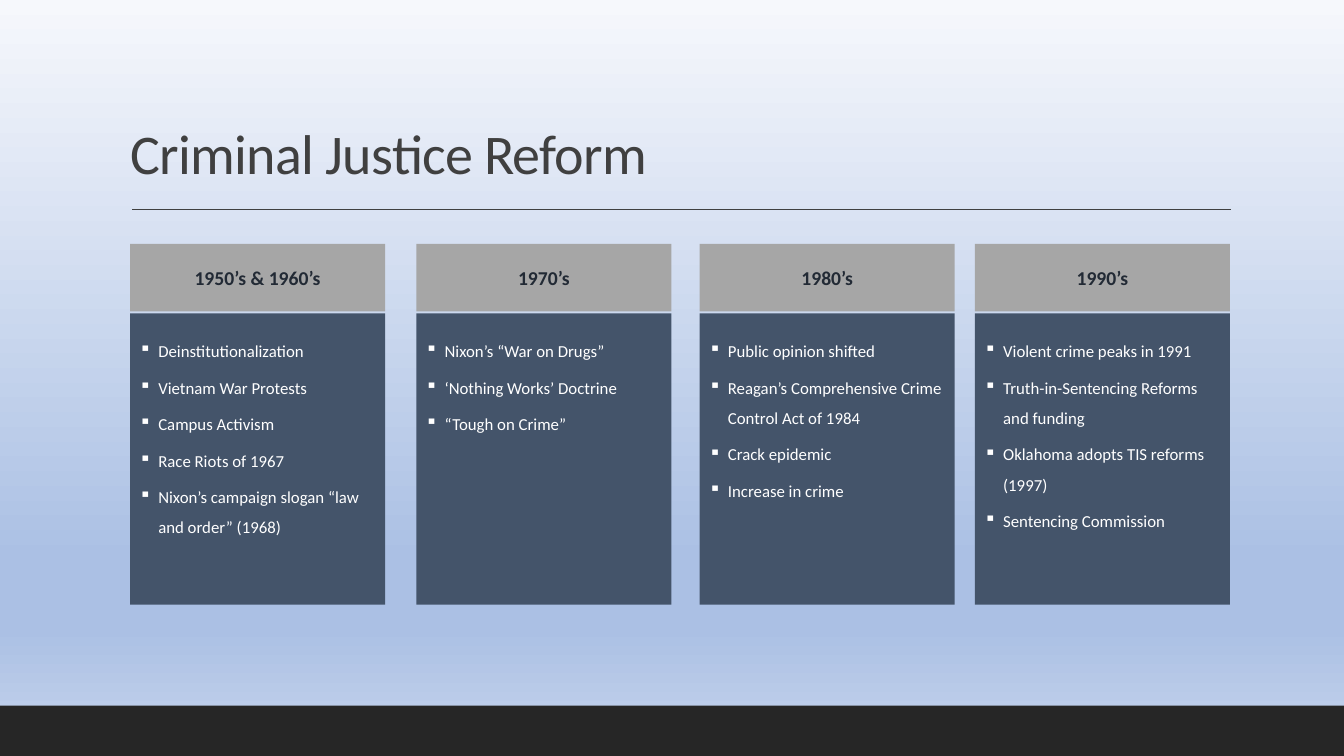
from copy import deepcopy
from dataclasses import dataclass

from lxml.etree import SubElement
from pptx import Presentation
from pptx.dml.color import RGBColor
from pptx.enum.shapes import MSO_CONNECTOR, MSO_SHAPE
from pptx.enum.text import MSO_ANCHOR, PP_ALIGN
from pptx.oxml.ns import qn
from pptx.util import Inches, Pt


@dataclass(frozen=True)
class Theme:
    font: str = "Calibri"
    ink: str = "404040"
    band: str = "262626"
    head: str = "A6A6A6"
    label: str = "222A35"
    body: str = "44546A"
    light: str = "FFFFFF"
    sky: tuple = ((0, "F6F8FC"), (74, "ABC0E4"), (83, "ABC0E4"), (100, "C7D5ED"))
    title_size: int = 40
    label_size: int = 14
    body_size: int = 12


def apply(target, values):
    for name, value in values.items():
        setattr(target, name, value)


class Deck:
    """Places elements by percent of the slide's width and height."""

    def __init__(self, theme):
        self.theme = theme
        self.prs = Presentation()
        apply(self.prs, {"slide_width": Inches(13.33), "slide_height": Inches(7.5)})
        self.slide = self.prs.slides.add_slide(self.prs.slide_layouts[6])

    def place(self, area):
        sides = (self.prs.slide_width, self.prs.slide_height) * 2
        return [round(side * share / 100) for side, share in zip(sides, area)]

    def sky(self):
        fill = self.slide.background.fill
        fill.gradient()
        fill.gradient_angle = 270
        stops = self.slide.element.xpath(".//a:gsLst")[0]
        while len(stops) < len(self.theme.sky):
            stops.append(deepcopy(stops[0]))
        for stop, (share, color) in zip(fill.gradient_stops, self.theme.sky):
            stop.position = share / 100
            stop.color.rgb = RGBColor.from_string(color)

    def box(self, area, color):
        shape = self.slide.shapes.add_shape(MSO_SHAPE.RECTANGLE, *self.place(area))
        shape.shadow.inherit = False
        shape.fill.solid()
        shape.fill.fore_color.rgb = RGBColor.from_string(color)
        shape.line.fill.background()
        return shape

    def rule(self, ends, color):
        line = self.slide.shapes.add_connector(MSO_CONNECTOR.STRAIGHT, *self.place(ends))
        line.line.width = Pt(1)
        line.line.color.rgb = RGBColor.from_string(color)
        SubElement(line._element.spPr, qn("a:effectLst"))

    def text(self, par, words, size, color, bold=False):
        run = par.add_run()
        run.text = words
        apply(run.font, {"name": self.theme.font, "size": Pt(size), "bold": bold})
        run.font.color.rgb = RGBColor.from_string(color)
        return run

    def title(self, area, words):
        frame = self.slide.shapes.add_textbox(*self.place(area)).text_frame
        apply(frame, {"word_wrap": True, "vertical_anchor": MSO_ANCHOR.BOTTOM})
        par = frame.paragraphs[0]
        par.line_spacing = 0.9
        run = self.text(par, words, self.theme.title_size, self.theme.ink)
        run._r.get_or_add_rPr().set("spc", "-50")

    def label(self, area, words):
        frame = self.box(area, self.theme.head).text_frame
        apply(frame, {"word_wrap": True, "vertical_anchor": MSO_ANCHOR.MIDDLE})
        par = frame.paragraphs[0]
        par.alignment = PP_ALIGN.CENTER
        self.text(par, words, self.theme.label_size, self.theme.label, True)

    def bullets(self, area, items):
        frame = self.box(area, self.theme.body).text_frame
        apply(frame, {"word_wrap": True, "vertical_anchor": MSO_ANCHOR.TOP,
                      "margin_left": Inches(0.09), "margin_right": Inches(0.09),
                      "margin_top": Inches(0.17)})
        for index, item in enumerate(items):
            par = frame.add_paragraph() if index else frame.paragraphs[0]
            apply(par, {"alignment": PP_ALIGN.LEFT, "line_spacing": 1.5,
                        "space_before": Pt(4.5)})
            props = par._p.get_or_add_pPr()
            props.set("marL", str(Inches(0.19)))
            props.set("indent", str(-Inches(0.19)))
            SubElement(props, qn("a:buChar")).set("char", "▪")
            self.text(par, item, self.theme.body_size, self.theme.light)


ERAS = [
    (9.68, "1950’s & 1960’s", [
        "Deinstitutionalization", "Vietnam War Protests", "Campus Activism",
        "Race Riots of 1967", "Nixon’s campaign slogan “law and order” (1968)"]),
    (30.98, "1970’s", [
        "Nixon’s “War on Drugs”", "‘Nothing Works’ Doctrine", "“Tough on Crime”"]),
    (52.06, "1980’s", [
        "Public opinion shifted", "Reagan’s Comprehensive Crime Control Act of 1984",
        "Crack epidemic", "Increase in crime"]),
    (72.54, "1990’s", [
        "Violent crime peaks in 1991", "Truth-in-Sentencing Reforms and funding",
        "Oklahoma adopts TIS reforms (1997)", "Sentencing Commission"]),
]
WIDTH = 18.98


def main():
    deck = Deck(Theme())

    # Backdrop, footer band and title
    deck.sky()
    deck.box((0, 93.33, 100, 6.67), deck.theme.band)
    deck.rule((9.83, 27.73, 91.6, 27.73), deck.theme.ink)
    deck.title((9, 4.13, 82.52, 21.2), "Criminal Justice Reform")

    # One card per era
    for left, era, items in ERAS:
        deck.bullets((left, 41.47, WIDTH, 38.53), items)
        deck.label((left, 32.27, WIDTH, 8.93), era)

    deck.prs.save("out.pptx")


if __name__ == "__main__":
    main()
